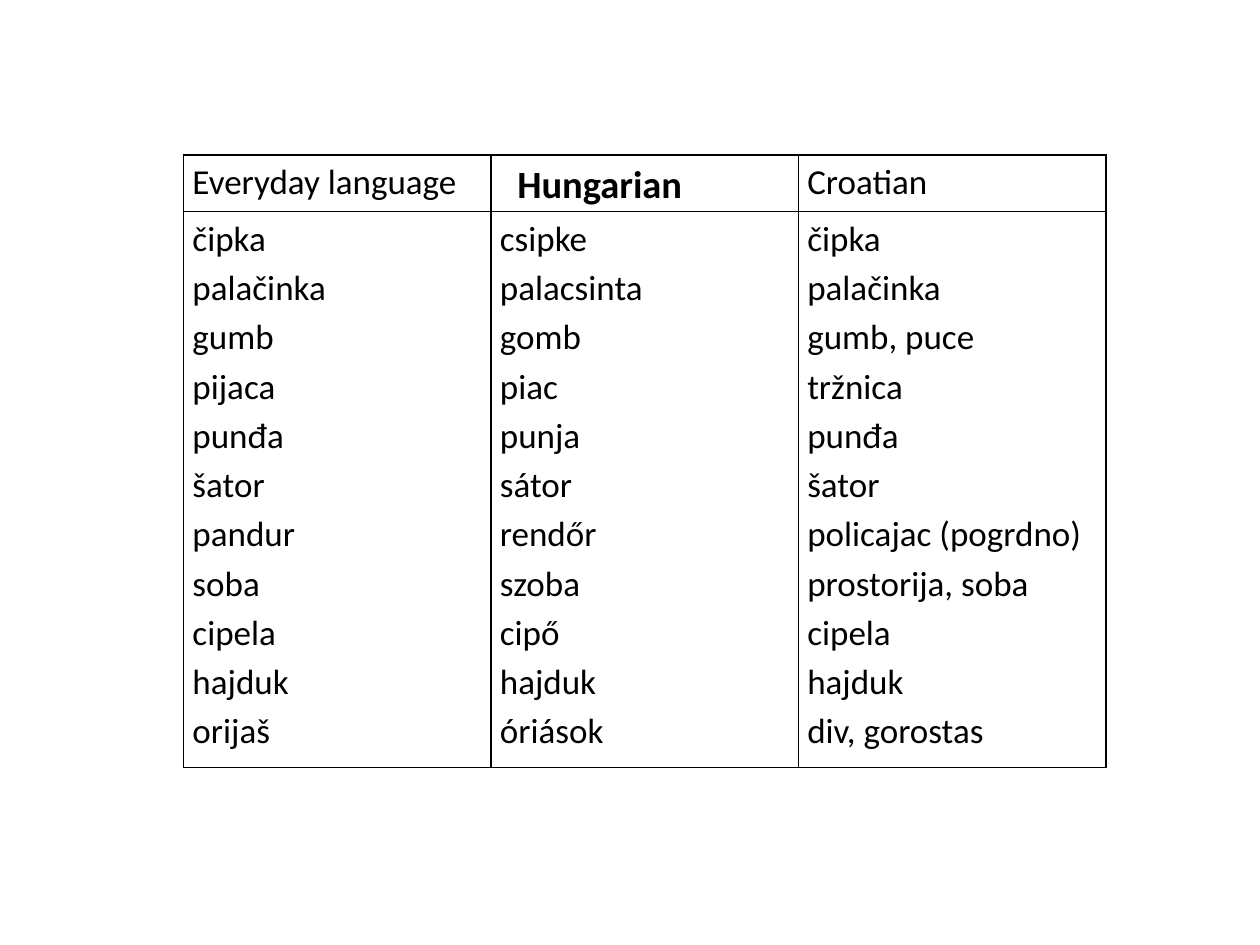
import pptx
import pptx.dml.color
import pptx.oxml.ns
import pptx.util
from lxml import etree

Pt = pptx.util.Pt
COLORS = {"ink": "000000"}
FONT = "Calibri"

# Heading and words of each language
VOCABULARY = {
    "Everyday language": ["čipka", "palačinka", "gumb", "pijaca", "punđa", "šator",
                          "pandur", "soba", "cipela", "hajduk", "orijaš"],
    "Hungarian": ["csipke", "palacsinta", "gomb", "piac", "punja", "sátor",
                  "rendőr", "szoba", "cipő", "hajduk", "óriások"],
    "Croatian": ["čipka", "palačinka", "gumb, puce", "tržnica", "punđa", "šator",
                 "policajac (pogrdno)", "prostorija, soba", "cipela", "hajduk",
                 "div, gorostas"],
}
EMPHASIZED = "Hungarian"


def border_cell(cell, width=1):
    """Draw a solid line on all four sides of the cell."""
    properties = cell._tc.get_or_add_tcPr()
    qn = pptx.oxml.ns.qn
    for side in ("a:lnL", "a:lnR", "a:lnT", "a:lnB"):
        line = etree.SubElement(properties, qn(side), w=str(Pt(width)))
        fill = etree.SubElement(line, qn("a:solidFill"))
        etree.SubElement(fill, qn("a:srgbClr"), val=COLORS["ink"])


def fill_cell(cell, lines, size=20, bold=False, indent=0):
    border_cell(cell)
    cell.fill.background()
    cell.margin_left, cell.margin_right = Pt(5 + indent), Pt(5)
    cell.margin_top = cell.margin_bottom = 0
    frame = cell.text_frame
    for index, line in enumerate(lines):
        paragraph = frame.add_paragraph() if index else frame.paragraphs[0]
        paragraph.line_spacing = 1.15
        run = paragraph.add_run()
        run.text = line
        run.font.name = FONT
        run.font.size = Pt(size)
        run.font.bold = bold
        run.font.color.rgb = pptx.dml.color.RGBColor.from_string(COLORS["ink"])


def add_vocabulary_table(slide, left, top, width, height):
    heading_height = 32.4
    vocabulary = slide.shapes.add_table(
        2, len(VOCABULARY), Pt(left), Pt(top), Pt(width), Pt(height)).table
    vocabulary.first_row = vocabulary.horz_banding = False
    vocabulary.rows[0].height = Pt(heading_height)
    vocabulary.rows[1].height = Pt(height - heading_height)

    for column, (language, words) in enumerate(VOCABULARY.items()):
        vocabulary.columns[column].width = Pt(width / len(VOCABULARY))
        emphasis = {}
        if language == EMPHASIZED:
            emphasis = {"size": 22, "bold": True, "indent": 10}
        fill_cell(vocabulary.cell(0, column), [language], **emphasis)
        fill_cell(vocabulary.cell(1, column), words)


def main():
    presentation = pptx.Presentation()
    presentation.slide_width, presentation.slide_height = Pt(720), Pt(540)
    slide = presentation.slides.add_slide(presentation.slide_layouts[6])
    add_vocabulary_table(slide, 105, 88.5, 527, 350)
    presentation.save("out.pptx")


if __name__ == "__main__":
    main()
